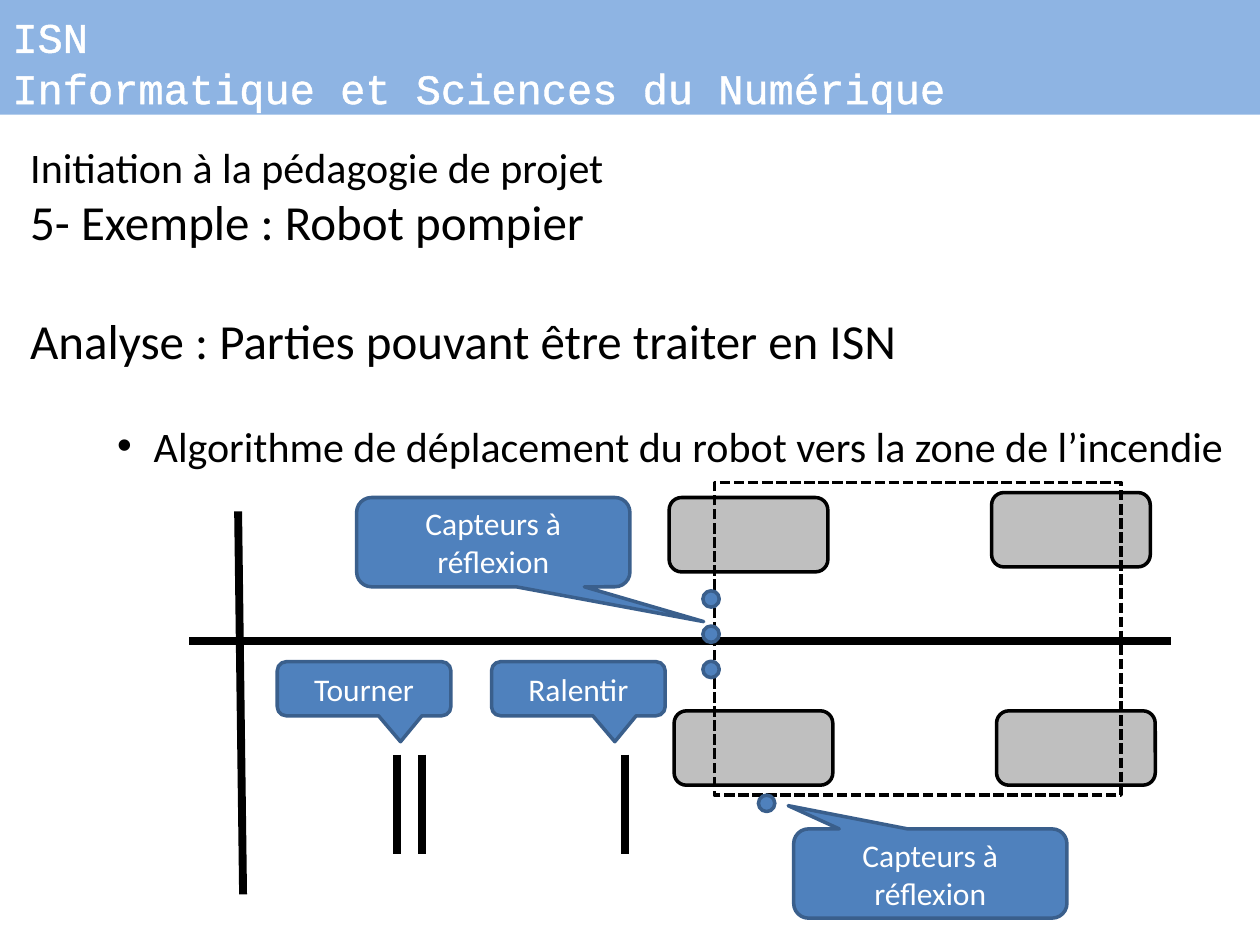
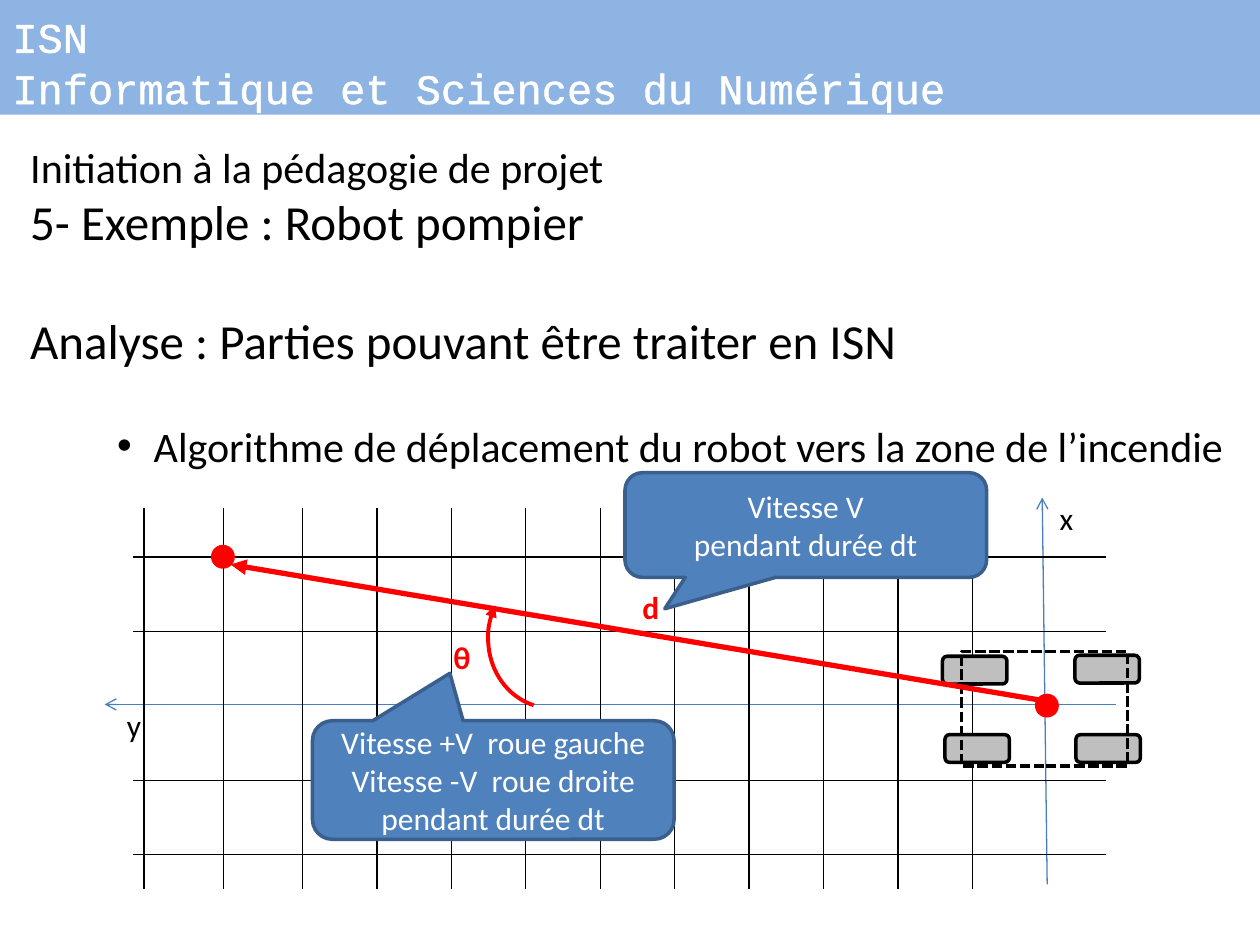
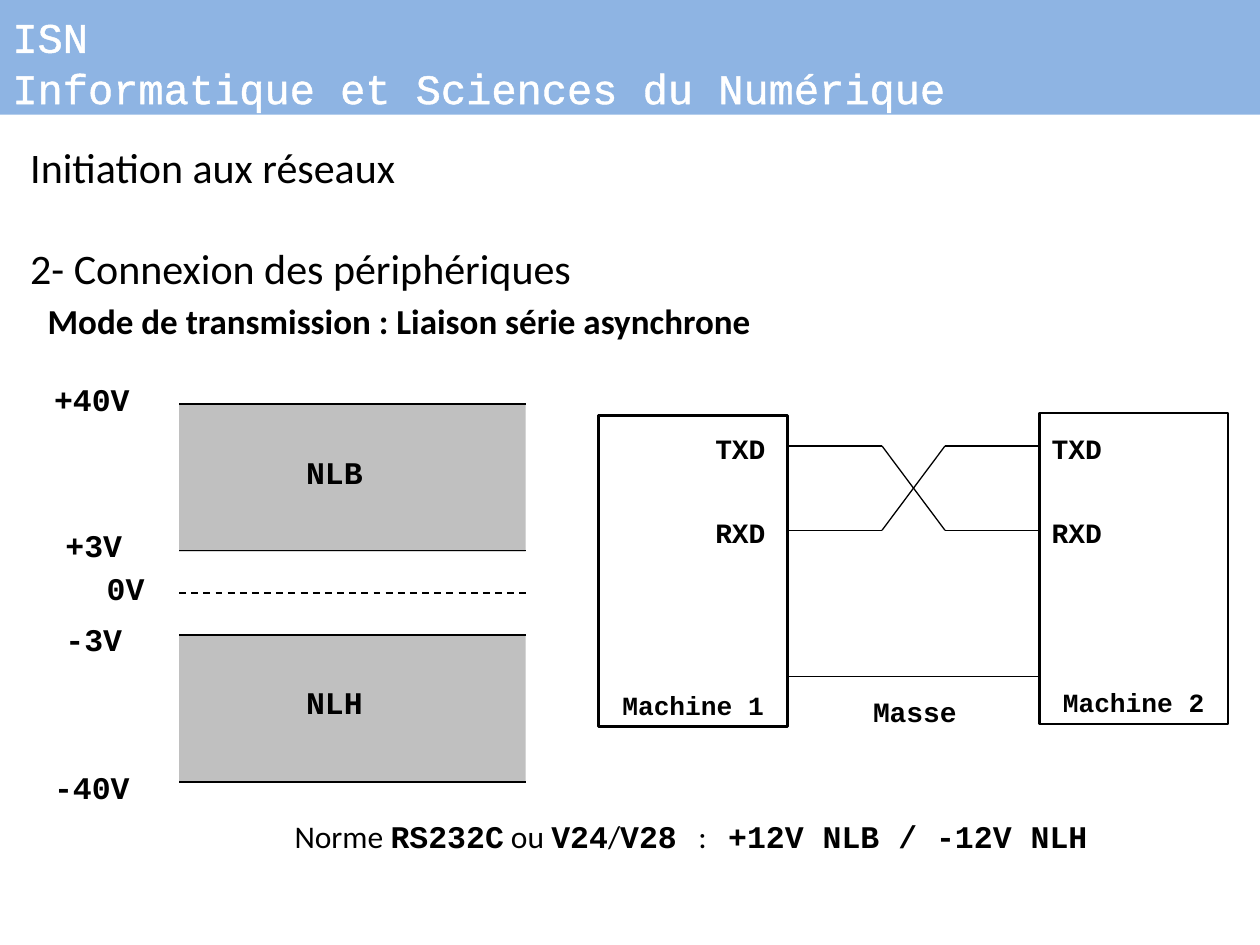
from lxml.etree import SubElement
from pptx import Presentation
from pptx.dml.color import RGBColor
from pptx.enum.dml import MSO_LINE
from pptx.enum.shapes import MSO_CONNECTOR, MSO_SHAPE
from pptx.enum.text import MSO_ANCHOR, MSO_AUTO_SIZE, PP_ALIGN
from pptx.oxml.ns import qn
from pptx.util import Cm, Pt

HUES = {
    "band": "8EB4E3", "white": "FFFFFF", "black": "000000", "wheel": "BFBFBF",
    "level": "C0C0C0", "blue": "4F81BD", "edge": "3A5F8C", "axis": "4B7EBC",
    "red": "FF0000",
}
SANS, MONO = "Calibri", "Courier New"
LEAD = 1.22  # line height over text size
BAND = ("ISN", "Informatique et Sciences du Numérique")


def rgb(name):
    return RGBColor.from_string(HUES[name])


def apply(item, **values):
    for key, value in values.items():
        setattr(item, key, value)


class Deck:
    def __init__(self):
        self.prs = Presentation()
        apply(self.prs, slide_width=Cm(25.4), slide_height=Cm(19.05))
        self.slide = None

    # Slide with its title band
    def new(self):
        self.slide = self.prs.slides.add_slide(self.prs.slide_layouts[5])
        title = self.slide.shapes.title
        apply(title, left=0, top=0, width=Cm(25.4), height=Cm(2.31))
        title.fill.solid()
        title.fill.fore_color.rgb = rgb("band")
        frame = title.text_frame
        apply(frame, auto_size=MSO_AUTO_SIZE.NONE, word_wrap=True,
              vertical_anchor=MSO_ANCHOR.TOP, margin_left=Cm(0.25),
              margin_top=Cm(0.2), margin_bottom=0)
        for n, line in enumerate(BAND):
            para = frame.paragraphs[0] if n == 0 else frame.add_paragraph()
            run = self.put(para, line, 24, MONO, "white")
            edge = SubElement(run.font._element, qn("a:ln"), w="18400")
            fill = SubElement(edge, qn("a:solidFill"))
            SubElement(fill, qn("a:srgbClr"), val=HUES["white"])
            run.font._element.insert(0, edge)

    # Text
    def put(self, para, text, size, font=SANS, hue="black", bold=False,
            align=PP_ALIGN.LEFT):
        run = para.add_run()
        run.text = text
        apply(run.font, name=font, size=Pt(size), bold=bold)
        run.font.color.rgb = rgb(hue)
        para.alignment = align
        if font == MONO:
            para.line_spacing = Pt(round(size * LEAD, 1))
        return run

    def box(self, x, y, w, h):
        box = self.slide.shapes.add_textbox(Cm(x), Cm(y), Cm(w), Cm(h))
        apply(box.text_frame, word_wrap=True, margin_right=0)
        return box.text_frame

    def label(self, text, x, y, w=2.54, h=1.02, size=18, **style):
        frame = self.box(x, y, w, h)
        self.put(frame.paragraphs[0], text, size, **style)

    def body(self, *rows):
        """Each row is text, size, size of the gap above, bullet or not."""
        frame = self.box(0.36, 2.72, 25.04, 8.64)
        for n, (text, size, gap, dot) in enumerate(rows):
            para = frame.paragraphs[0] if n == 0 else frame.add_paragraph()
            self.put(para, text, size)
            para.space_before = Pt(round(gap * LEAD, 1))
            if dot:
                props = para._p.get_or_add_pPr()
                props.set("marL", str(Cm(2.49)))
                props.set("indent", str(Cm(-0.74)))
                SubElement(props, qn("a:buFont"), typeface="Arial")
                SubElement(props, qn("a:buChar"), char="•")

    # Shapes and lines
    def shape(self, kind, x, y, w, h, fill=None, line=None, width=2, dash=None):
        item = self.slide.shapes.add_shape(kind, Cm(x), Cm(y), Cm(w), Cm(h))
        item.shadow.inherit = False
        if fill:
            item.fill.solid()
            item.fill.fore_color.rgb = rgb(fill)
        else:
            item.fill.background()
        if line:
            item.line.color.rgb = rgb(line)
            apply(item.line, width=Pt(width), dash_style=dash)
        else:
            item.line.fill.background()
        return item

    def tip(self, item, kind):
        edge = item._element.spPr.find(qn("a:ln"))
        SubElement(edge, qn("a:tailEnd"), type=kind)

    def line(self, x1, y1, x2, y2, hue="black", width=0.75, dash=None, tip=None):
        item = self.slide.shapes.add_connector(
            MSO_CONNECTOR.STRAIGHT, Cm(x1), Cm(y1), Cm(x2), Cm(y2))
        item.line.color.rgb = rgb(hue)
        apply(item.line, width=Pt(width), dash_style=dash)
        if tip:
            self.tip(item, tip)
        SubElement(item._element.spPr, qn("a:effectLst"))

    def dot(self, x, y, size=0.33, fill="blue", line="edge"):
        self.shape(MSO_SHAPE.OVAL, x, y, size, size, fill, line)

    def robot(self, wheels, w, h, frame):
        for x, y in wheels:
            self.shape(MSO_SHAPE.ROUNDED_RECTANGLE, x, y, w, h, "wheel", "black")
        self.shape(MSO_SHAPE.RECTANGLE, *frame, line="black",
                   dash=MSO_LINE.SQUARE_DOT)

    def bubble(self, text, x, y, w, h, tail):
        item = self.shape(MSO_SHAPE.ROUNDED_RECTANGULAR_CALLOUT,
                          x, y, w, h, "blue", "edge")
        item.adjustments[0], item.adjustments[1] = tail
        frame = item.text_frame
        apply(frame, word_wrap=True, vertical_anchor=MSO_ANCHOR.MIDDLE)
        for n, row in enumerate(text.split("\n")):
            para = frame.paragraphs[0] if n == 0 else frame.add_paragraph()
            self.put(para, row, 18, hue="white", align=PP_ALIGN.CENTER)


ROBOT = (
    ("Initiation à la pédagogie de projet", 24, 0, False),
    ("5- Exemple : Robot pompier", 28, 0, False),
    ("Analyse : Parties pouvant être traiter en ISN", 28, 28, False),
    ("Algorithme de déplacement du robot vers la zone de l’incendie",
     24, 24, True),
)


def track(deck):
    deck.new()
    deck.body(*ROBOT)
    # Ground marks
    deck.line(23.6, 12.93, 3.81, 12.93, width=4.5)
    for x in (8, 8.51, 12.6):
        deck.line(x, 15.21, x, 17.22, width=4.5)
    deck.line(4.8, 10.31, 4.9, 18.03, width=4.5)
    # Robot and sensors
    deck.robot(((19.99, 9.93), (20.09, 14.33), (13.49, 10.03), (13.59, 14.33)),
               3.2, 1.5, (14.4, 9.73, 8.2, 6.3))
    deck.dot(15.29, 16.03)
    for n in range(3):
        deck.dot(14.17, 11.91 + 0.71 * n)
    # Callouts
    for x, y, tail in ((7.19, 10.03, (0.77, 0.89)), (16, 16.71, (-0.52, -0.76))):
        deck.bubble("Capteurs à réflexion", x, y, 5.51, 1.8, tail)
    for text, x in (("Ralentir", 9.91), ("Tourner", 5.59)):
        deck.bubble(text, x, 13.34, 3.5, 1.09, (0.21, 0.98))


def travel(deck):
    deck.new()
    deck.body(*ROBOT)
    # Axes
    deck.line(21.11, 17.83, 21.01, 10.03, "axis", tip="arrow")
    deck.line(22.5, 14.2, 2.11, 14.2, "axis", tip="arrow")
    deck.label("x", 21.11, 9.93, 0.8)
    deck.label("y", 2.31, 14.1, 0.8)
    # Grid
    for n in (0, 1, 3, 4):
        deck.line(22.3, 11.23 + 1.5 * n, 2.69, 11.23 + 1.5 * n)
    for x in [19.6 - 1.5 * n for n in range(10)] + [4.5, 2.9]:
        deck.line(x, 17.93, x, 10.24)
    # Robot and its way to the target
    deck.robot(((21.67, 13.21), (21.69, 14.81), (19, 13.23), (19.05, 14.81)),
               1.3, 0.56, (19.38, 13.13, 3.35, 2.31))
    for x, y in ((4.29, 11.02), (20.9, 14.02)):
        deck.dot(x, y, 0.41, "red", "red")
    deck.line(21.01, 14.12, 4.65, 11.38, "red", 3, tip="triangle")
    arc = deck.shape(MSO_SHAPE.ARC, 9.86, 11.23, 2.79, 3.07, line="red", width=2.25)
    arc.adjustments[0], arc.adjustments[1] = 160.26, 1.16
    arc.rotation = 201.8
    deck.tip(arc, "triangle")
    deck.label("θ", 8.89, 12.73, 0.86, hue="red", bold=True)
    deck.label("d", 12.7, 11.73, 0.86, hue="red", bold=True)
    # Callouts
    deck.bubble("Vitesse V\npendant durée dt",
                12.6, 9.53, 7.29, 2.11, (-0.39, 0.8))
    deck.bubble("Vitesse +V  roue gauche\nVitesse -V  roue droite\n"
                "pendant durée dt", 6.3, 14.53, 7.29, 2.39, (-0.12, -0.9))


def serial(deck):
    deck.new()
    deck.body(("Initiation aux réseaux", 24, 0, False),
              ("2- Connexion des périphériques", 24, 24, False))
    deck.label("Mode de transmission : Liaison série asynchrone",
               0.71, 5.92, 19, 1.12, 20, bold=True)
    mono = {"font": MONO, "bold": True}
    # Voltage levels
    left, wide = 3.61, 6.99
    for name, y in (("NLB", 8.15), ("NLH", 12.8)):
        deck.shape(MSO_SHAPE.RECTANGLE, left, y, wide, 2.97, "level")
        deck.label(name, 5.92, y + 0.84, **mono)
    for y, dash in ((8.15, None), (11.1, None), (11.96, MSO_LINE.DASH),
                    (12.8, None), (15.77, None)):
        deck.line(left, y, left + wide, y, width=1, dash=dash)
    for text, x, y in (("+40V", 0.84, 7.52), ("+3V", 1.07, 10.46),
                       ("0V", 1.9, 11.33), ("-3V", 1.07, 12.37),
                       ("-40V", 0.84, 15.34)):
        deck.label(text, x, y, **mono)
    # Standard
    para = deck.box(5.69, 16.33, 17.4, 1.02).paragraphs[0]
    for text, code in (("Norme ", False), ("RS232C", True), (" ou ", False),
                       ("V24", True), ("/", False), ("V28", True),
                       ("\t:\t", False), ("+12V NLB / -12V NLH", True)):
        deck.put(para, text, 18, MONO if code else SANS, bold=code)
    tabs = SubElement(para._p.get_or_add_pPr(), qn("a:tabLst"))
    for stop in (8.14, 8.74):
        SubElement(tabs, qn("a:tab"), pos=str(Cm(stop)), algn="l")
    # Machines
    for text, x, y in (("Machine 2", 20.95, 8.33), ("Machine 1", 12.07, 8.38)):
        item = deck.shape(MSO_SHAPE.RECTANGLE, x, y, 3.81, 6.27,
                          line="black", width=1.5)
        apply(item.text_frame, word_wrap=True, vertical_anchor=MSO_ANCHOR.BOTTOM)
        deck.put(item.text_frame.paragraphs[0], text, 15,
                 align=PP_ALIGN.CENTER, **mono)
    # Crossed wires and ground
    start, bend, cross, end = 15.88, 17.78, 19.05, 20.95
    send, take = 8.99, 10.69
    for name, y, far in (("TXD", send, take), ("RXD", take, send)):
        deck.line(start, y, bend, y)
        deck.line(bend, y, cross, far)
        deck.line(cross, y, end, y)
        for x in (14.17, end):
            deck.label(name, x, y - 0.43, 1.52, 0.94, 16, **mono)
    deck.line(start, 13.64, end, 13.64)
    deck.label("Masse", 17.35, 13.87, 2.2, 0.94, 16, **mono)


def main():
    deck = Deck()
    for draw in (track, travel, serial):
        draw(deck)
    deck.prs.save("out.pptx")


if __name__ == "__main__":
    main()
